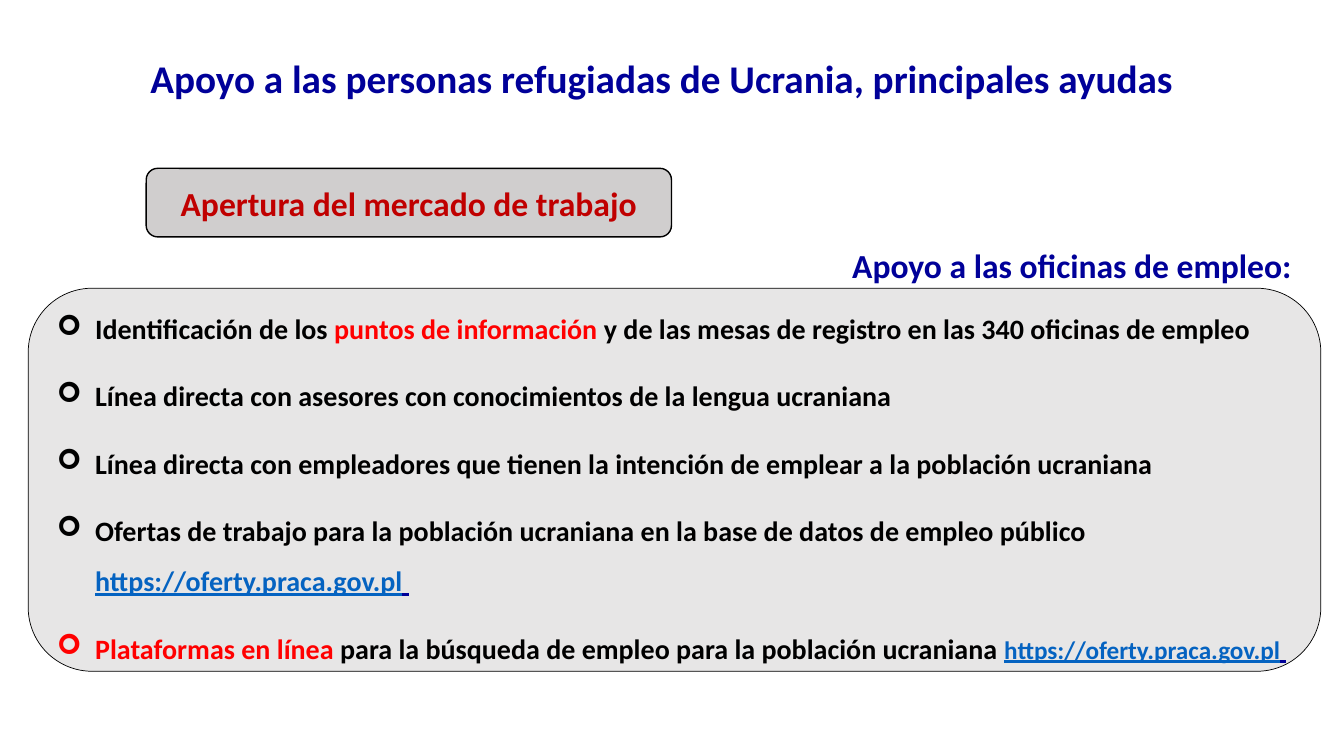
from lxml import etree
from pptx import Presentation
from pptx.dml.color import RGBColor
from pptx.enum import shapes, text
from pptx.oxml import ns
from pptx.util import Inches, Pt

NAVY, BLACK, RED, LINK = "000099", "000000", "FF0000", "0563C1"
JOBS_URL = "https://oferty.praca.gov.pl"


def add_run(paragraph, words, size, color, underline=None):
    run = paragraph.add_run()
    run.text = words
    font = run.font
    font.name, font.size, font.bold = "Calibri", Pt(size), True
    font.underline = underline
    font.color.rgb = RGBColor.from_string(color)


def add_rounded_box(left, top, width, height, fill, line_width):
    shape = slide.shapes.add_shape(
        shapes.MSO_SHAPE.ROUNDED_RECTANGLE,
        Inches(left), Inches(top), Inches(width), Inches(height))
    shape.shadow.inherit = False
    shape.fill.solid()
    shape.fill.fore_color.rgb = RGBColor.from_string(fill)
    shape.line.color.rgb = RGBColor.from_string(BLACK)
    shape.line.width = Pt(line_width)
    shape.text_frame.word_wrap = True
    shape.text_frame.vertical_anchor = text.MSO_ANCHOR.MIDDLE
    return shape


presentation = Presentation()
presentation.slide_width, presentation.slide_height = Inches(13.33), Inches(7.5)
slide = presentation.slides.add_slide(presentation.slide_layouts[5])

title = slide.shapes.title
title.left, title.top = Inches(0.81), Inches(0.19)
title.width, title.height = Inches(11.5), Inches(1.22)
title.text_frame.vertical_anchor = text.MSO_ANCHOR.MIDDLE
paragraph = title.text_frame.paragraphs[0]
paragraph.alignment = text.PP_ALIGN.CENTER
paragraph.line_spacing = 0.9
add_run(paragraph, "Apoyo a las personas refugiadas de Ucrania, principales ayudas", 28, NAVY)

heading = slide.shapes.add_textbox(Inches(6.91), Inches(2.41), Inches(6), Inches(0.5))
heading.text_frame.word_wrap = True
heading.text_frame.vertical_anchor = text.MSO_ANCHOR.MIDDLE
paragraph = heading.text_frame.paragraphs[0]
paragraph.alignment = text.PP_ALIGN.RIGHT
paragraph.line_spacing = 0.9
add_run(paragraph, "Apoyo a las oficinas de empleo:", 24, NAVY)

label = add_rounded_box(1.45, 1.67, 5.21, 0.68, "D0CECE", 1)
paragraph = label.text_frame.paragraphs[0]
paragraph.alignment = text.PP_ALIGN.CENTER
add_run(paragraph, "Apertura del mercado de trabajo", 24, "C00000")

measures = [
    [("Identificación de los ", 20, BLACK), ("puntos de información ", 20, RED),
     ("y de las mesas de registro en las 340 oficinas de empleo", 20, BLACK)],
    [("Línea directa con asesores con conocimientos de la lengua ucraniana", 20, BLACK)],
    [("Línea directa con empleadores que tienen la intención de emplear a la población ucraniana",
      20, BLACK)],
    [("Ofertas de trabajo para la población ucraniana en la base de datos de empleo público ",
      20, BLACK),
     (JOBS_URL, 20, LINK, True), (" ", 20, NAVY, True)],
    [("Plataformas en línea ", 20, RED),
     ("para la búsqueda de empleo para la población ucraniana ", 20, BLACK),
     (JOBS_URL, 18, LINK, True), (" ", 18, NAVY, True)],
]
panel = add_rounded_box(0.28, 2.86, 12.82, 3.8, "E7E6E6", 0.5)
for index, runs in enumerate(measures):
    paragraph = panel.text_frame.paragraphs[0] if index == 0 else panel.text_frame.add_paragraph()
    paragraph.alignment = text.PP_ALIGN.LEFT
    paragraph.line_spacing = 1.5
    paragraph.space_before = Pt(6 if index else 0)
    paragraph.space_after = Pt(6)
    properties = paragraph._p.get_or_add_pPr()
    properties.set("marL", str(Inches(0.38)))
    properties.set("indent", str(-Inches(0.38)))
    etree.SubElement(properties, ns.qn("a:buFont"), typeface="Wingdings")
    etree.SubElement(properties, ns.qn("a:buChar"), char="➢")
    for run in runs:
        add_run(paragraph, *run)

presentation.save("out.pptx")
